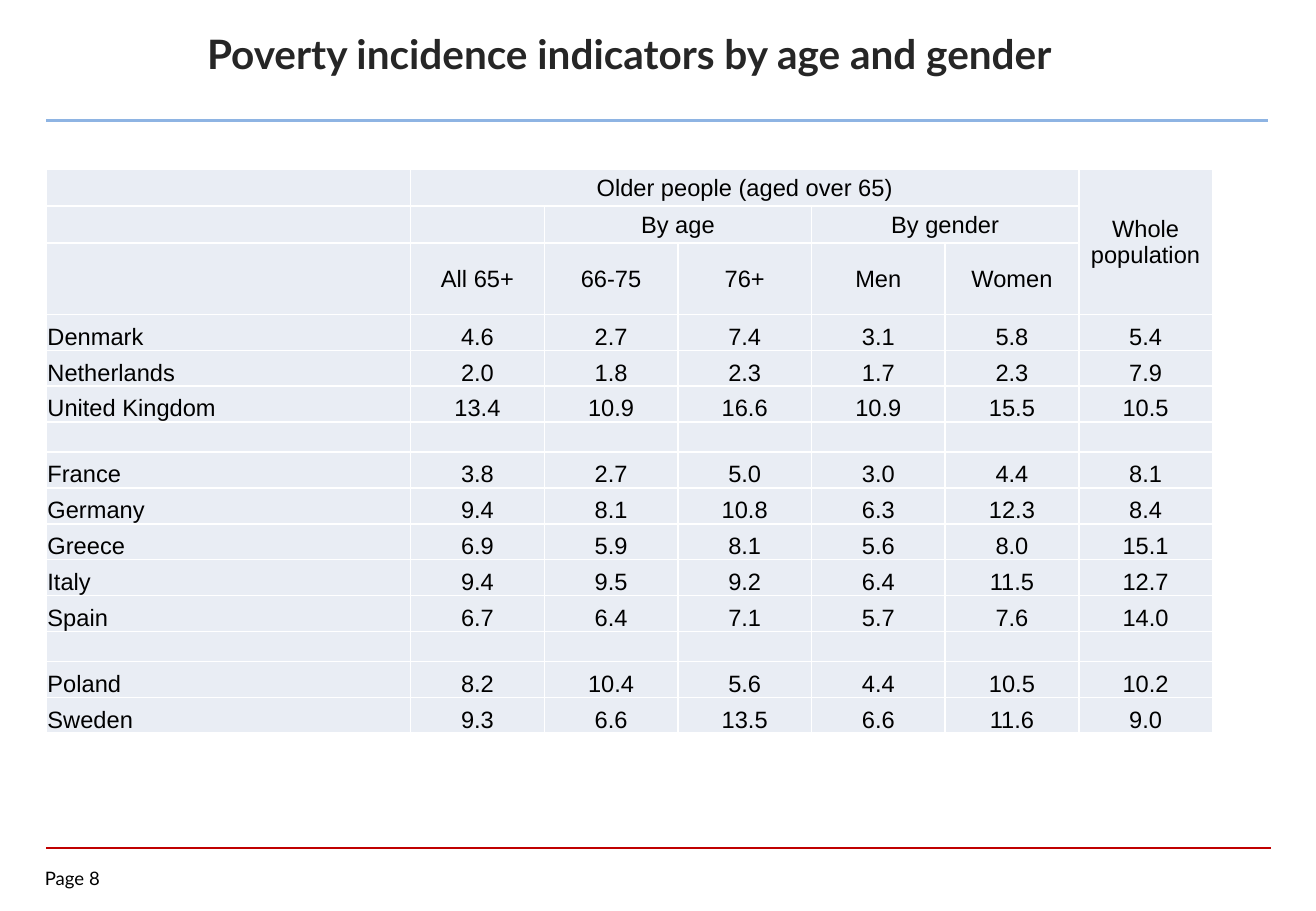
from dataclasses import dataclass

from lxml import etree
from pptx import Presentation
from pptx.dml.color import RGBColor
from pptx.enum import shapes, text
from pptx.oxml import ns
from pptx.util import Pt

TITLE = "Poverty incidence indicators by age and gender"
PAGE = "Page 8"
ROWS = [
    ("", "Older people (aged over 65)", "", "", "", "", "Whole population"),
    ("", "", "By age", "", "By gender", "", ""),
    ("", "All 65+", "66-75", "76+", "Men", "Women", ""),
    ("Denmark", "4.6", "2.7", "7.4", "3.1", "5.8", "5.4"),
    ("Netherlands", "2.0", "1.8", "2.3", "1.7", "2.3", "7.9"),
    ("United Kingdom", "13.4", "10.9", "16.6", "10.9", "15.5", "10.5"),
    ("",) * 7,
    ("France", "3.8", "2.7", "5.0", "3.0", "4.4", "8.1"),
    ("Germany", "9.4", "8.1", "10.8", "6.3", "12.3", "8.4"),
    ("Greece", "6.9", "5.9", "8.1", "5.6", "8.0", "15.1"),
    ("Italy", "9.4", "9.5", "9.2", "6.4", "11.5", "12.7"),
    ("Spain", "6.7", "6.4", "7.1", "5.7", "7.6", "14.0"),
    ("",) * 7,
    ("Poland", "8.2", "10.4", "5.6", "4.4", "10.5", "10.2"),
    ("Sweden", "9.3", "6.6", "13.5", "6.6", "11.6", "9.0"),
]
MERGES = [((0, 1), (0, 5)), ((0, 6), (2, 6)), ((1, 2), (1, 3)), ((1, 4), (1, 5))]
HEADER_HEIGHTS = (22, 22, 42.4)
COUNTRY_HEIGHT, GAP_HEIGHT = 21.25, 17.9
COLUMN_WIDTHS = (216,) + (79.2,) * 6
LEFT = 27.4


@dataclass(frozen=True)
class Theme:
    heading_font: str = "Lato"
    table_font: str = "Arial"
    title_size: int = 24
    table_size: int = 14
    page_size: int = 11
    ink: str = "000000"
    title_ink: str = "262626"
    cell: str = "E9EDF4"
    border: str = "FFFFFF"
    top_rule: str = "8EB4E3"
    bottom_rule: str = "C00000"


THEME = Theme()


def write(frame, content, *, font, size, color=THEME.ink, bold=False,
          align=text.PP_ALIGN.LEFT, anchor=text.MSO_ANCHOR.TOP, insets=(0, 0, 0, 0)):
    frame.word_wrap = True
    frame.vertical_anchor = anchor
    frame.margin_left, frame.margin_top, frame.margin_right, frame.margin_bottom = map(Pt, insets)
    paragraph = frame.paragraphs[0]
    paragraph.alignment = align
    run = paragraph.add_run()
    run.text = content
    run.font.name, run.font.size, run.font.bold = font, Pt(size), bold
    run.font.color.rgb = RGBColor.from_string(color)


def add_rule(slide, y, right, color, width):
    rule = slide.shapes.add_connector(
        shapes.MSO_CONNECTOR.STRAIGHT, Pt(LEFT), Pt(y), Pt(right), Pt(y))
    rule.line.color.rgb = RGBColor.from_string(color)
    rule.line.width = Pt(width)
    etree.SubElement(rule._element.spPr, ns.qn("a:effectLst"))


def add_borders(cell):
    properties = cell._tc.get_or_add_tcPr()
    for side in ("lnL", "lnR", "lnT", "lnB"):
        line = etree.SubElement(properties, ns.qn(f"a:{side}"), w=str(Pt(1)))
        fill = etree.SubElement(line, ns.qn("a:solidFill"))
        etree.SubElement(fill, ns.qn("a:srgbClr"), val=THEME.border)


def fill_cell(cell, content, row, column):
    add_borders(cell)
    cell.fill.solid()
    cell.fill.fore_color.rgb = RGBColor.from_string(THEME.cell)
    cell.margin_left = cell.margin_top = cell.margin_right = Pt(0.72)
    cell.margin_bottom = Pt(0)
    if not content:
        etree.SubElement(cell.text_frame.paragraphs[0]._p, ns.qn("a:endParaRPr"),
                         sz=str(THEME.table_size * 100))
        return
    header = row < len(HEADER_HEIGHTS)
    write(cell.text_frame, content, font=THEME.table_font, size=THEME.table_size,
          align=text.PP_ALIGN.CENTER if column else text.PP_ALIGN.LEFT)
    body = cell.text_frame._txBody.bodyPr
    body.attrib.clear()
    cell.vertical_anchor = text.MSO_ANCHOR.MIDDLE if header else text.MSO_ANCHOR.BOTTOM


def add_poverty_table(slide):
    heights = list(HEADER_HEIGHTS) + [
        COUNTRY_HEIGHT if row[0] else GAP_HEIGHT for row in ROWS[len(HEADER_HEIGHTS):]]
    table = slide.shapes.add_table(
        len(ROWS), len(COLUMN_WIDTHS), Pt(LEFT), Pt(100.1),
        Pt(sum(COLUMN_WIDTHS)), Pt(sum(heights))).table
    table.first_row = table.horz_banding = False
    for column, width in zip(table.columns, COLUMN_WIDTHS):
        column.width = Pt(width)
    for row, height in zip(table.rows, heights):
        row.height = Pt(height)
    for r, values in enumerate(ROWS):
        for c, value in enumerate(values):
            fill_cell(table.cell(r, c), value, r, c)
    for start, end in MERGES:
        table.cell(*start).merge(table.cell(*end))


def main():
    presentation = Presentation()
    presentation.slide_width, presentation.slide_height = Pt(780), Pt(540)
    slide = presentation.slides.add_slide(presentation.slide_layouts[5])

    add_rule(slide, 502.6, 753.1, THEME.bottom_rule, 1)
    add_rule(slide, 71.3, 751.7, THEME.top_rule, 1.5)

    title = slide.shapes.title
    title.left, title.top, title.width, title.height = map(Pt, (100.8, 13.7, 544.3, 51.1))
    title.text_frame.auto_size = text.MSO_AUTO_SIZE.NONE
    write(title.text_frame, TITLE, font=THEME.heading_font, size=THEME.title_size,
          color=THEME.title_ink, bold=True, align=text.PP_ALIGN.CENTER,
          insets=(7.2, 3.6, 7.2, 3.6))

    page = slide.shapes.add_textbox(Pt(26.6), Pt(514.1), Pt(52.6), Pt(15.8))
    write(page.text_frame, PAGE, font=THEME.heading_font, size=THEME.page_size)

    add_poverty_table(slide)
    presentation.save("out.pptx")


if __name__ == "__main__":
    main()
